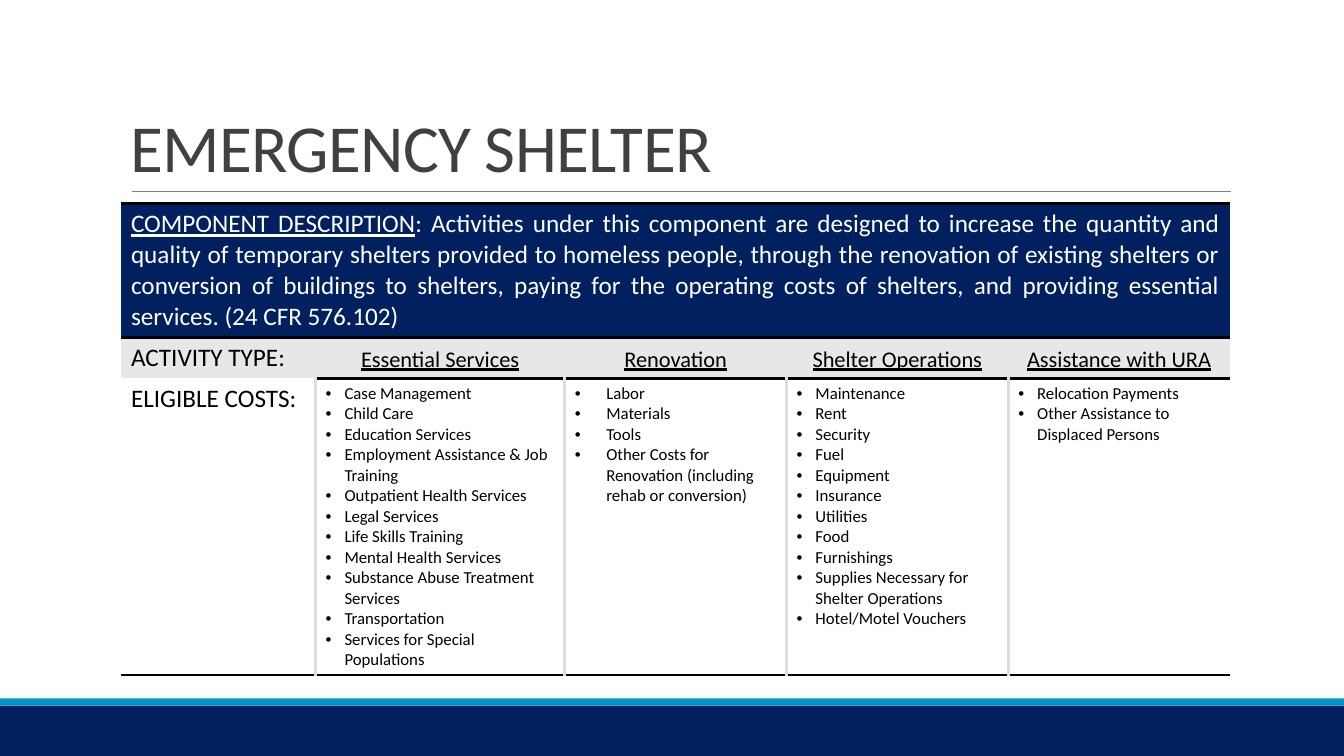
from lxml.etree import SubElement
from pptx import Presentation
from pptx.dml.color import RGBColor
from pptx.enum.shapes import MSO_CONNECTOR, MSO_SHAPE
from pptx.enum.text import MSO_ANCHOR, PP_ALIGN
from pptx.oxml.ns import qn
from pptx.util import Pt

TITLE = "EMERGENCY SHELTER"
DESCRIPTION = (
    "COMPONENT DESCRIPTION",
    ": Activities under this component are designed to increase the quantity and quality of "
    "temporary shelters provided to homeless people, through the renovation of existing shelters "
    "or conversion of buildings to shelters, paying for the operating costs of shelters, and "
    "providing essential services. (24 CFR 576.102)",
)
ROW_LABELS = ("ACTIVITY TYPE:", "ELIGIBLE COSTS:")
# activity, bullet indent in points, eligible costs
ACTIVITIES = [
    ("Essential Services", 13.5, [
        "Case Management", "Child Care", "Education Services",
        "Employment Assistance & Job Training", "Outpatient Health Services",
        "Legal Services", "Life Skills Training", "Mental Health Services",
        "Substance Abuse Treatment Services", "Transportation",
        "Services for Special Populations"]),
    ("Renovation", 22.5, [
        "Labor", "Materials", "Tools",
        "Other Costs for Renovation (including rehab or conversion)"]),
    ("Shelter Operations", 13.5, [
        "Maintenance", "Rent", "Security", "Fuel", "Equipment", "Insurance", "Utilities",
        "Food", "Furnishings", "Supplies Necessary for Shelter Operations",
        "Hotel/Motel Vouchers"]),
    ("Assistance with URA", 13.5, [
        "Relocation Payments", "Other Assistance to Displaced Persons"]),
]

FONT = "Calibri"
NAVY = RGBColor(0x00, 0x20, 0x60)
BLUE = RGBColor(0x00, 0x94, 0xC8)
WHITE = RGBColor(0xFF, 0xFF, 0xFF)
BLACK = RGBColor(0x00, 0x00, 0x00)
CHARCOAL = RGBColor(0x40, 0x40, 0x40)
RULE_GRAY = RGBColor(0x80, 0x80, 0x80)
HEADER_GRAY = RGBColor(0xE7, 0xE7, 0xE7)
DIVIDER_GRAY = RGBColor(0xDD, 0xDD, 0xDD)

PAGE_WIDTH, PAGE_HEIGHT = 960, 540
LEFT, WIDTH = 86.4, 792
TABLE_TOP = 145.5
COLUMN_WIDTHS = (139, 178, 158.4, 158.4, 158.4)
ROW_HEIGHTS = (95.5, 29.2, 212)
NO_STYLE = "{2D5ABB26-0587-4C30-8999-92F81FD0307C}"
HEAVY = (BLACK, 2)
DIVIDER = (DIVIDER_GRAY, 2.25)


def format_run(span, size, color, underline=False):
    span.font.name = FONT
    span.font.size = Pt(size)
    span.font.color.rgb = color
    span.font.underline = underline


def add_band(page, top, height, color):
    band = page.shapes.add_shape(
        MSO_SHAPE.RECTANGLE, Pt(0), Pt(top), Pt(PAGE_WIDTH), Pt(height))
    band.shadow.inherit = False
    band.fill.solid()
    band.fill.fore_color.rgb = color
    band.line.fill.background()


def style_cell(cell, fill, **borders):
    """Set borders, given by side as (color, width), and then the fill."""
    properties = cell._tc.get_or_add_tcPr()
    for side in ("L", "R", "T", "B"):
        color, width = borders.get(side, (None, 0))
        line = SubElement(properties, qn(f"a:ln{side}"), w=str(Pt(width)))
        if color is None:
            SubElement(line, qn("a:noFill"))
        else:
            paint = SubElement(line, qn("a:solidFill"))
            SubElement(paint, qn("a:srgbClr"), val=str(color))
    cell.fill.solid()
    cell.fill.fore_color.rgb = fill


def write_cell(cell, text, size, underline=False):
    cell.text_frame.text = text
    for para in cell.text_frame.paragraphs:
        format_run(para.runs[0], size, BLACK, underline)


def add_bullets(cell, indent):
    for para in cell.text_frame.paragraphs:
        properties = para._p.get_or_add_pPr()
        properties.set("marL", str(Pt(indent)))
        properties.set("indent", str(-Pt(indent)))
        SubElement(properties, qn("a:buFont"), typeface="Arial")
        SubElement(properties, qn("a:buChar"), char="•")


def add_title(page):
    rule = page.shapes.add_connector(
        MSO_CONNECTOR.STRAIGHT, Pt(94.3), Pt(136.8), Pt(879), Pt(136.8))
    rule.line.color.rgb = RULE_GRAY
    rule.line.width = Pt(0.5)
    SubElement(rule._element.spPr, qn("a:effectLst"))

    box = page.shapes.add_textbox(Pt(LEFT), Pt(22.3), Pt(WIDTH), Pt(114.5))
    frame = box.text_frame
    frame.word_wrap = True
    frame.vertical_anchor = MSO_ANCHOR.BOTTOM
    frame.text = TITLE
    para = frame.paragraphs[0]
    para.line_spacing = 0.85
    format_run(para.runs[0], 48, CHARCOAL)
    para.runs[0].font._element.set("spc", "-50")


def add_cost_table(page):
    holder = page.shapes.add_table(
        len(ROW_HEIGHTS), len(COLUMN_WIDTHS),
        Pt(LEFT), Pt(TABLE_TOP), Pt(WIDTH), Pt(sum(ROW_HEIGHTS)))
    table = holder.table
    table.first_row = table.horz_banding = False
    table._tbl.tblPr.find(qn("a:tableStyleId")).text = NO_STYLE
    for column, width in zip(table.columns, COLUMN_WIDTHS):
        column.width = Pt(width)
    for row, height in zip(table.rows, ROW_HEIGHTS):
        row.height = Pt(height)

    for cell in table.rows[0].cells:
        style_cell(cell, NAVY, T=HEAVY, B=HEAVY)
    description = table.cell(0, 0)
    description.merge(table.cell(0, len(COLUMN_WIDTHS) - 1))
    para = description.text_frame.paragraphs[0]
    para.alignment = PP_ALIGN.JUSTIFY
    for text, underline in zip(DESCRIPTION, (True, False)):
        span = para.add_run()
        span.text = text
        format_run(span, 18, WHITE, underline)

    activity_label, costs_label = table.cell(1, 0), table.cell(2, 0)
    for cell, text in zip((activity_label, costs_label), ROW_LABELS):
        write_cell(cell, text, 18)
    style_cell(activity_label, HEADER_GRAY, T=HEAVY)
    style_cell(costs_label, WHITE, R=DIVIDER, B=HEAVY)

    for index, (activity, indent, costs) in enumerate(ACTIVITIES, start=1):
        header, cost_cell = table.cell(1, index), table.cell(2, index)
        write_cell(header, activity, 16, underline=True)
        header.text_frame.paragraphs[0].alignment = PP_ALIGN.CENTER
        header.vertical_anchor = MSO_ANCHOR.BOTTOM
        style_cell(header, HEADER_GRAY, T=HEAVY, B=HEAVY)

        write_cell(cost_cell, "\n".join(costs), 12)
        add_bullets(cost_cell, indent)
        borders = {"L": DIVIDER, "T": HEAVY, "B": HEAVY}
        if index < len(ACTIVITIES):
            borders["R"] = DIVIDER
        style_cell(cost_cell, WHITE, **borders)


def main():
    deck = Presentation()
    deck.slide_width, deck.slide_height = Pt(PAGE_WIDTH), Pt(PAGE_HEIGHT)
    page = deck.slides.add_slide(deck.slide_layouts[6])
    add_band(page, 504, 36, NAVY)
    add_band(page, 498.8, 5.2, BLUE)
    add_title(page)
    add_cost_table(page)
    deck.save("out.pptx")


if __name__ == "__main__":
    main()
